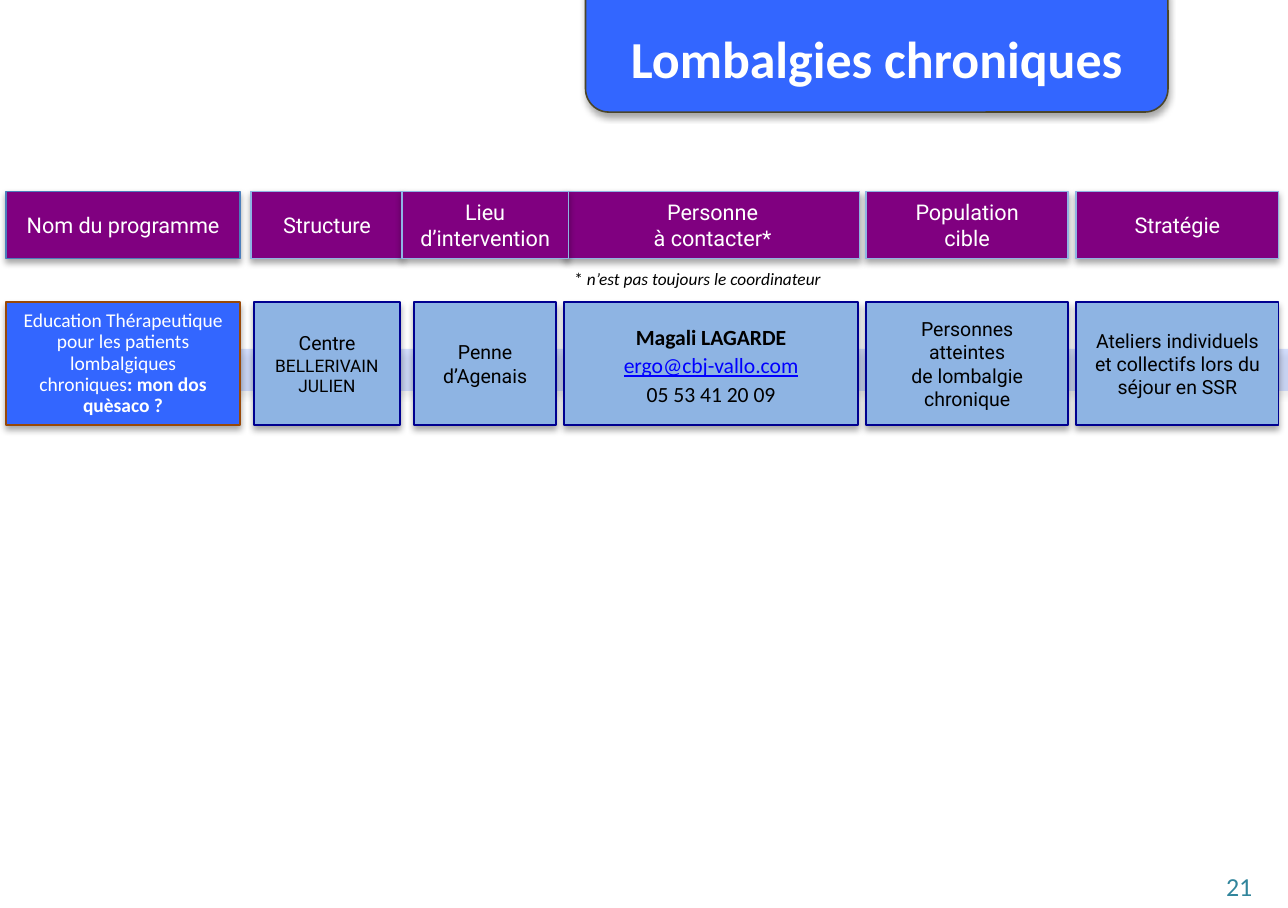
from lxml import etree
from pptx import Presentation
from pptx.dml.color import RGBColor
from pptx.enum.shapes import MSO_SHAPE
from pptx.enum.text import MSO_ANCHOR, MSO_AUTO_SIZE, PP_ALIGN
from pptx.oxml.ns import qn
from pptx.util import Inches, Pt

RECTANGLE, ROUNDED = MSO_SHAPE.RECTANGLE, MSO_SHAPE.ROUNDED_RECTANGLE
MIDDLE, TOP = MSO_ANCHOR.MIDDLE, MSO_ANCHOR.TOP
CENTER, LEFT, RIGHT = PP_ALIGN.CENTER, PP_ALIGN.LEFT, PP_ALIGN.RIGHT

WHITE = RGBColor(0xFF, 0xFF, 0xFF)
BLACK = RGBColor(0x00, 0x00, 0x00)
BLUE = RGBColor(0x33, 0x66, 0xFF)
PURPLE = RGBColor(0x80, 0x00, 0x80)
LIGHT_BLUE = RGBColor(0x8E, 0xB4, 0xE3)
STEEL_BLUE = RGBColor(0x4B, 0x7E, 0xBC)
NAVY = RGBColor(0x00, 0x00, 0x90)
BROWN = RGBColor(0x98, 0x48, 0x07)
OLIVE = RGBColor(0x4A, 0x45, 0x2A)
LINK_BLUE = RGBColor(0x00, 0x00, 0xFF)
TEAL = RGBColor(0x31, 0x85, 0x9C)

# A paragraph is a list of runs; a run is its text and the font settings it changes.
TITLE = [[("Lombalgies chroniques", {"bold": True})]]
FOOTNOTE = [[("* ", {}), ("n’est pas toujours le coordinateur", {"italic": True})]]
PAGE_NUMBER = [[("21", {})]]
HEADER_TOP, HEADER_HEIGHT = 1.23, 0.43
CELL_TOP, CELL_HEIGHT = 1.94, 0.79

# Left, width, lines, outline. "Lieu" comes last because it overlaps its neighbours.
HEADERS = [
    (0.04, 1.5, ["Nom du programme"], STEEL_BLUE),
    (1.61, 0.98, ["Structure"], LIGHT_BLUE),
    (3.63, 1.89, ["Personne", "à contacter*"], LIGHT_BLUE),
    (5.56, 1.3, ["Population", "cible"], LIGHT_BLUE),
    (6.91, 1.3, ["Stratégie"], LIGHT_BLUE),
    (2.58, 1.07, ["Lieu", "d’intervention"], LIGHT_BLUE),
]

PROGRAMME = [[
    ("Education Thérapeutique pour les patients lombalgiques chroniques", {}),
    (": mon dos quèsaco ?", {"bold": True}),
]]
CONTACT = [
    [("Magali LAGARDE", {"bold": True})],
    [("ergo@cbj-vallo.com", {"color": LINK_BLUE, "underline": True})],
    [("05 53 41 20 09", {})],
]

# Left, width, paragraphs, fill, outline, text settings
BLACK_ROBOTO = {"size": 9, "font": "Roboto", "color": BLACK}
CELLS = [
    (0.04, 1.5, PROGRAMME, BLUE, BROWN,
     {"size": 9, "color": WHITE, "spacing": 0.9}),
    (1.63, 0.94, [[("Centre", {})], [("BELLERIVAIN JULIEN", {"size": Pt(8)})]],
     LIGHT_BLUE, NAVY, BLACK_ROBOTO),
    (2.66, 0.91, [[("Penne d’Agenais", {})]], LIGHT_BLUE, NAVY, BLACK_ROBOTO),
    (3.62, 1.89, CONTACT, LIGHT_BLUE, NAVY,
     {"size": 10, "color": BLACK, "spacing": 1.1}),
    (5.56, 1.3, [[("Personnes atteintes", {})], [("de lombalgie chronique", {})]],
     LIGHT_BLUE, NAVY, BLACK_ROBOTO),
    (6.91, 1.3, [[("Ateliers individuels", {})],
                 [("et collectifs lors du séjour en SSR", {})]],
     LIGHT_BLUE, NAVY, BLACK_ROBOTO),
]


def write(shape, paragraphs, size, color, font="Calibri", align=CENTER,
          anchor=MIDDLE, spacing=1.0):
    frame = shape.text_frame
    frame.word_wrap = True
    frame.auto_size = MSO_AUTO_SIZE.NONE
    frame.vertical_anchor = anchor
    for index, runs in enumerate(paragraphs):
        paragraph = frame.add_paragraph() if index else frame.paragraphs[0]
        paragraph.alignment = align
        paragraph.line_spacing = spacing
        paragraph.font.size = Pt(size)
        paragraph.font.name = font
        paragraph.font.color.rgb = color
        for text, changes in runs:
            run = paragraph.add_run()
            run.text = text
            for name, value in changes.items():
                if name == "color":
                    run.font.color.rgb = value
                else:
                    setattr(run.font, name, value)


def add_alpha(color_element, percent):
    etree.SubElement(color_element, qn("a:alpha"), val=str(percent * 1000))


def add_box(slide, left, top, width, height, fill, outline=None, kind=RECTANGLE):
    """Add a filled box with a soft shadow below it."""
    box = slide.shapes.add_shape(
        kind, Inches(left), Inches(top), Inches(width), Inches(height))
    box.fill.solid()
    box.fill.fore_color.rgb = fill
    if outline is None:
        box.line.fill.background()
    else:
        box.line.color.rgb = outline
        box.line.width = Pt(0.75)
    box.shadow.inherit = False
    effects = box._element.spPr.find(qn("a:effectLst"))
    shadow = etree.SubElement(
        effects, qn("a:outerShdw"), blurRad=str(Pt(3.1)), dist=str(Pt(1.8)),
        dir="5400000", rotWithShape="0")
    add_alpha(etree.SubElement(shadow, qn("a:srgbClr"), val="000000"), 35)
    return box


def add_title(slide):
    """Put the title placeholder in front of a rounded tab."""
    tab = add_box(slide, 3.76, -0.18, 3.74, 0.9, BLUE, OLIVE, ROUNDED)
    title = slide.shapes.title
    title.left, title.top = tab.left, tab.top
    title.width, title.height = tab.width, tab.height
    tab._element.addnext(title._element)
    write(title, TITLE, 24, WHITE, spacing=1.5)


def add_label(slide, left, top, width, height, paragraphs, **style):
    label = slide.shapes.add_textbox(
        Inches(left), Inches(top), Inches(width), Inches(height))
    write(label, paragraphs, anchor=TOP, **style)


def main():
    presentation = Presentation()
    presentation.slide_width = Inches(8.27)
    presentation.slide_height = Inches(5.83)
    slide = presentation.slides.add_slide(presentation.slide_layouts[5])
    add_title(slide)

    for left, width, lines, outline in HEADERS:
        header = add_box(slide, left, HEADER_TOP, width, HEADER_HEIGHT, PURPLE, outline)
        write(header, [[(line, {})] for line in lines], 10, WHITE, "Roboto")

    band = add_box(slide, 1.38, 2.24, 7.03, 0.27, BLUE)
    add_alpha(band._element.spPr.find(qn("a:solidFill"))[0], 20)

    for left, width, paragraphs, fill, outline, style in CELLS:
        cell = add_box(slide, left, CELL_TOP, width, CELL_HEIGHT, fill, outline)
        write(cell, paragraphs, **style)

    add_label(slide, 3.59, 1.67, 2.2, 0.24, FOOTNOTE, size=8, color=BLACK, align=LEFT)
    add_label(slide, 7.14, 5.54, 1, 0.3, PAGE_NUMBER, size=12, color=TEAL, align=RIGHT)
    presentation.save("out.pptx")


if __name__ == "__main__":
    main()
